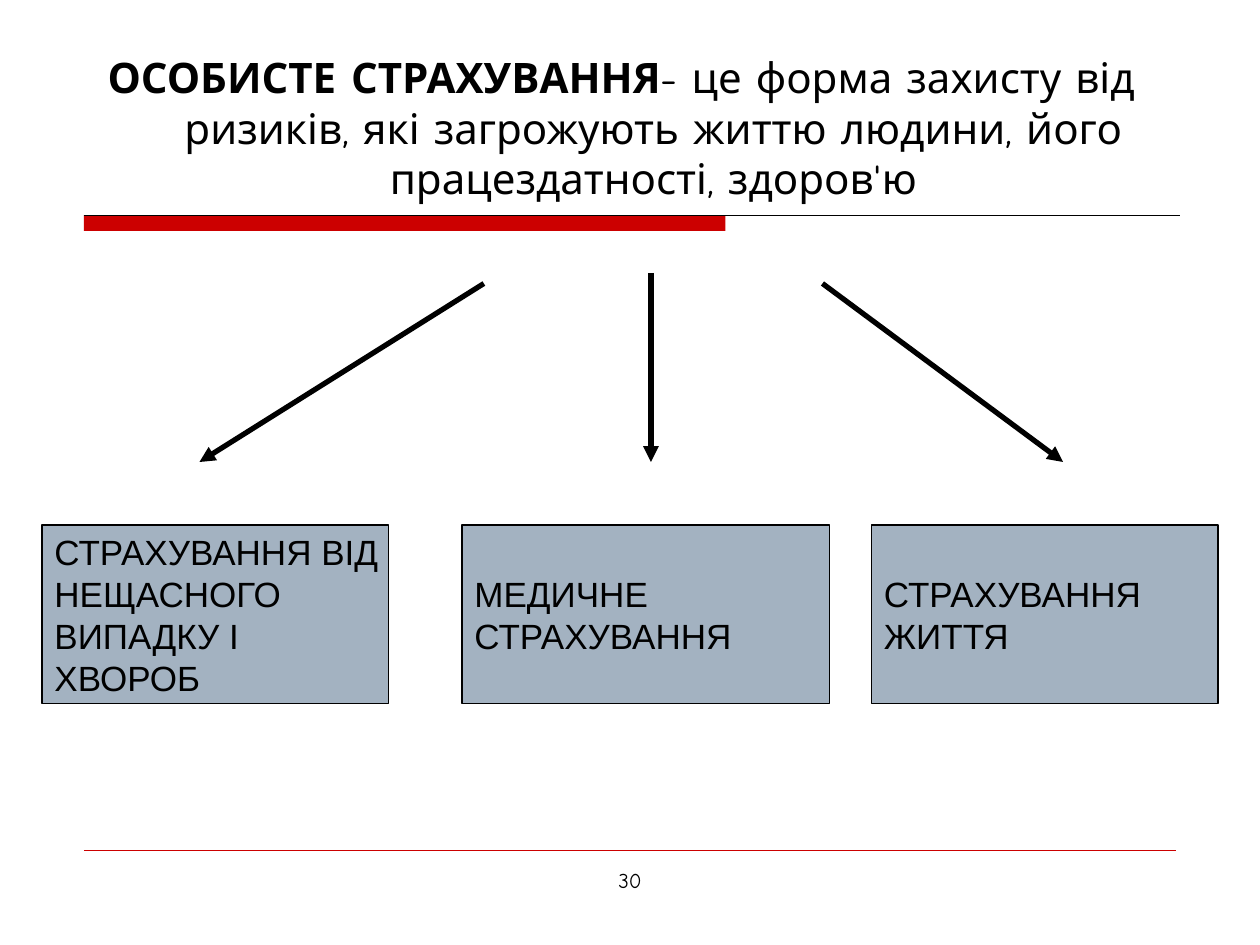
import pptx
import pptx.util
import pptx.dml.color
import pptx.enum.shapes
import pptx.enum.text
import pptx.oxml.ns
import lxml.etree

Pt = pptx.util.Pt
ALIGN = pptx.enum.text.PP_ALIGN
ANCHOR = pptx.enum.text.MSO_ANCHOR
RED, BLACK, BLUE_GREY = "CC0000", "000000", "A3B2C1"


def color(hex_string):
    return pptx.dml.color.RGBColor.from_string(hex_string)


def set_font(font, name, size):
    font.name = name
    font.size = Pt(size)
    font.color.rgb = color(BLACK)


def add_line(page, start, end, line_color, width, arrow=False):
    line = page.shapes.add_connector(
        pptx.enum.shapes.MSO_CONNECTOR.STRAIGHT, *(Pt(v) for v in start + end))
    line.line.color.rgb = color(line_color)
    line.line.width = Pt(width)
    qn = pptx.oxml.ns.qn
    if arrow:
        lxml.etree.SubElement(line.line._get_or_add_ln(), qn("a:tailEnd"), type="triangle")
    lxml.etree.SubElement(line._element.spPr, qn("a:effectLst"))


def add_rectangle(page, left, top, width, height, fill):
    box = page.shapes.add_shape(pptx.enum.shapes.MSO_SHAPE.RECTANGLE,
                                Pt(left), Pt(top), Pt(width), Pt(height))
    box.shadow.inherit = False
    box.fill.solid()
    box.fill.fore_color.rgb = color(fill)
    return box


def add_header_rule(page, left, top, width, height):
    bar = add_rectangle(page, left, top, width * 0.585, height, RED)
    bar.line.fill.background()
    add_line(page, (left, top), (left + width, top), BLACK, 0.75)


def add_footer(page, left, top, width, number):
    add_line(page, (left, top), (left + width, top), RED, 0.25)
    box = page.shapes.add_textbox(Pt(246), Pt(top + 6), Pt(228), Pt(37.5))
    box.text_frame.word_wrap = True
    para = box.text_frame.paragraphs[0]
    para.text = number
    para.alignment = ALIGN.CENTER
    set_font(para.font, "Comic Neue", 12)


def add_title(page, left, top, width, height, term, definition):
    box = page.shapes.add_textbox(Pt(left), Pt(top), Pt(width), Pt(height))
    box.text_frame.word_wrap = True
    para = box.text_frame.paragraphs[0]
    para.alignment = ALIGN.CENTER
    # Hanging indent
    properties = para._p.get_or_add_pPr()
    properties.set("marL", str(Pt(36.75)))
    properties.set("indent", str(-Pt(36.75)))
    set_font(para.font, "Comic Neue", 24)
    for text, bold in ((term, True), (definition, False)):
        span = para.add_run()
        span.text = text
        span.font.bold = bold
        set_font(span.font, "Comic Neue", 24)


def add_branch(page, left, top, width, height, lines):
    box = add_rectangle(page, left, top, width, height, BLUE_GREY)
    box.line.color.rgb = color(BLACK)
    box.line.width = Pt(0.75)
    frame = box.text_frame
    frame.word_wrap = False
    frame.vertical_anchor = ANCHOR.MIDDLE
    for index, text in enumerate(lines):
        para = frame.add_paragraph() if index else frame.paragraphs[0]
        para.text = text
        para.alignment = ALIGN.LEFT
        set_font(para.font, "Arial", 20)


def main():
    deck = pptx.Presentation()
    deck.slide_width, deck.slide_height = Pt(720), Pt(540)
    page = deck.slides.add_slide(deck.slide_layouts[6])

    # Frame of the page
    add_header_rule(page, 48, 123, 626.5, 9)
    add_footer(page, 48, 486, 624, "30")

    # Kinds of insurance: left edge, width, lines of text
    branches = (
        (24, 198, ("СТРАХУВАННЯ ВІД", "НЕЩАСНОГО", "ВИПАДКУ І", "ХВОРОБ")),
        (264, 210, ("МЕДИЧНЕ", "СТРАХУВАННЯ")),
        (498, 198, ("СТРАХУВАННЯ", "ЖИТТЯ")),
    )
    for left, width, lines in branches:
        add_branch(page, left, 300, width, 102, lines)

    # Arrows from the definition to the kinds
    for start, end_x in (((276.5, 162), 114), ((372, 156), 372), ((470, 162), 607.5)):
        add_line(page, start, (end_x, 264), BLACK, 3, arrow=True)

    # Definition
    add_title(page, 31, 26, 648, 116, "ОСОБИСТЕ СТРАХУВАННЯ",
              "- це форма захисту від ризиків, які загрожують життю людини, "
              "його працездатності, здоров'ю")

    deck.save("out.pptx")


if __name__ == "__main__":
    main()
